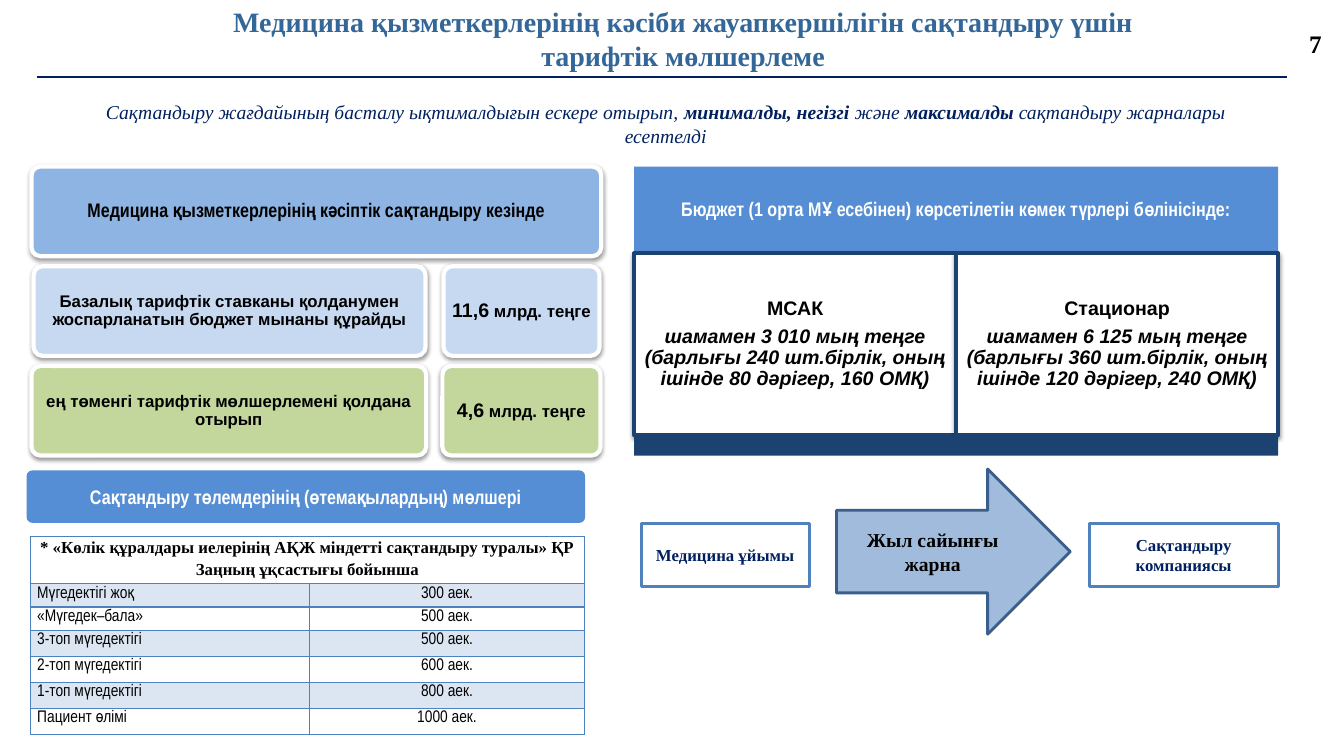
from lxml.etree import SubElement
from pptx import Presentation
from pptx.dml.color import RGBColor
from pptx.enum.shapes import MSO_CONNECTOR, MSO_SHAPE
from pptx.enum.text import MSO_ANCHOR, PP_ALIGN
from pptx.oxml.ns import qn
from pptx.util import Pt

BLACK = RGBColor(0x00, 0x00, 0x00)
WHITE = RGBColor(0xFF, 0xFF, 0xFF)
TITLE_BLUE = RGBColor(0x33, 0x66, 0x99)
NAVY = RGBColor(0x00, 0x20, 0x60)
DEEP_BLUE = RGBColor(0x1C, 0x42, 0x71)
MID_BLUE = RGBColor(0x55, 0x8E, 0xD5)
SKY_BLUE = RGBColor(0x8E, 0xB4, 0xE3)
PALE_BLUE = RGBColor(0xC6, 0xD9, 0xF1)
GREEN = RGBColor(0xC3, 0xD6, 0x9B)
ACCENT = RGBColor(0x4F, 0x81, 0xBD)
ARROW_FILL = RGBColor(0xA0, 0xBB, 0xDB)
ARROW_LINE = RGBColor(0x3A, 0x5F, 0x8C)
BAND = RGBColor(0xDC, 0xE6, 0xF2)

ARIAL = "Arial"
NARROW = "Arial Narrow"
TIMES = "Times New Roman"


class SlideBuilder:
    def __init__(self, slide):
        self.slide = slide

    def put_text(self, tf, paragraphs, font, size, color, bold=True, italic=False,
                 align=PP_ALIGN.CENTER, spacing=None, after=None):
        for i, runs in enumerate(paragraphs):
            p = tf.paragraphs[0] if i == 0 else tf.add_paragraph()
            p.alignment = align
            if spacing:
                p.line_spacing = spacing
            if after:
                p.space_after = Pt(after)
            for run in [runs] if isinstance(runs, str) else runs:
                text, changes = (run, {}) if isinstance(run, str) else run
                r = p.add_run()
                r.text = text
                r.font.name = font
                r.font.size = Pt(changes.get("size", size))
                r.font.bold = changes.get("bold", bold)
                r.font.italic = changes.get("italic", italic)
                r.font.color.rgb = color

    def text(self, box, paragraphs, font, size, color, wrap=True, **style):
        tf = self.slide.shapes.add_textbox(*map(Pt, box)).text_frame
        tf.word_wrap = wrap
        tf.vertical_anchor = MSO_ANCHOR.MIDDLE
        self.put_text(tf, paragraphs, font, size, color, **style)

    def shape(self, kind, box, fill, line=None, width=2, radius=None, inset=None, shadow=False):
        sp = self.slide.shapes.add_shape(kind, *map(Pt, box))
        sp.fill.solid()
        sp.fill.fore_color.rgb = fill
        if line is None:
            sp.line.fill.background()
        else:
            sp.line.color.rgb = line
            sp.line.width = Pt(width)
        if radius:
            sp.adjustments[0] = radius
        sp.shadow.inherit = False
        if shadow:
            effects = sp._element.spPr.find(qn("a:effectLst"))
            outer = SubElement(effects, qn("a:outerShdw"), blurRad=str(Pt(3.1)),
                               dist=str(Pt(1.6)), dir="5400000", rotWithShape="0")
            tint = SubElement(outer, qn("a:srgbClr"), val=str(BLACK))
            SubElement(tint, qn("a:alpha"), val="38000")
        tf = sp.text_frame
        tf.word_wrap = True
        tf.vertical_anchor = MSO_ANCHOR.MIDDLE
        if inset:
            tf.margin_left = tf.margin_right = tf.margin_top = tf.margin_bottom = Pt(inset)
        return tf

    def card(self, box, fill, runs, font, size):
        tf = self.shape(MSO_SHAPE.ROUNDED_RECTANGLE, box, fill, WHITE, 3, 0.1, 4, True)
        self.put_text(tf, [runs], font, size, BLACK, spacing=0.9)

    def line(self, x1, y1, x2, y2, color, width):
        cn = self.slide.shapes.add_connector(MSO_CONNECTOR.STRAIGHT, *map(Pt, (x1, y1, x2, y2)))
        cn.line.color.rgb = color
        cn.line.width = Pt(width)
        SubElement(cn._element.spPr, qn("a:effectLst"))

    def cell(self, cell, text, fill, font, bold, align):
        tc_pr = cell._tc.get_or_add_tcPr()
        for side in ("lnL", "lnR", "lnT", "lnB"):
            border = SubElement(tc_pr, qn(f"a:{side}"), w=str(Pt(1)))
            solid = SubElement(border, qn("a:solidFill"))
            SubElement(solid, qn("a:srgbClr"), val=str(ACCENT))
        cell.fill.solid()
        cell.fill.fore_color.rgb = fill
        cell.margin_left = cell.margin_right = Pt(5)
        cell.margin_top = cell.margin_bottom = 0
        if text:
            self.put_text(cell.text_frame, [text], font, 12, BLACK, bold, align=align,
                          spacing=1.15)

    def table(self, left, top, widths, heights, heading, rows):
        frame = self.slide.shapes.add_table(len(heights), len(widths), Pt(left), Pt(top),
                                            Pt(sum(widths)), Pt(sum(heights)))
        table = frame.table
        table.first_row = table.horz_banding = False
        for column, width in zip(table.columns, widths):
            column.width = Pt(width)
        for row, height in zip(table.rows, heights):
            row.height = Pt(height)
        for i, text in enumerate((heading, "")):
            self.cell(table.cell(0, i), text, WHITE, TIMES, True, PP_ALIGN.CENTER)
        table.cell(0, 0).merge(table.cell(0, 1))
        for i, values in enumerate(rows, 1):
            for j, text in enumerate(values):
                self.cell(table.cell(i, j), text, BAND if i % 2 else WHITE, NARROW, False,
                          PP_ALIGN.CENTER if j else PP_ALIGN.JUSTIFY)


def main():
    prs = Presentation()
    prs.slide_width, prs.slide_height = Pt(960), Pt(540)
    s = SlideBuilder(prs.slides.add_slide(prs.slide_layouts[6]))

    s.text((85, 1.5, 806, 52),
           ["Медицина қызметкерлерінің кәсіби жауапкершілігін сақтандыру үшін",
            "тарифтік мөлшерлеме"], TIMES, 20, TITLE_BLUE)
    s.line(26.5, 54.7, 919.5, 54.7, NAVY, 1.5)
    strong = {"bold": True}
    s.text((54, 65, 843, 47),
           [["Сақтандыру жағдайының басталу ықтималдығын ескере отырып, ",
             ("минималды, негізгі ", strong), "және ", ("максималды ", strong),
             "сақтандыру жарналары есептелді"]], TIMES, 14, NAVY, bold=False, italic=True)

    s.card((22.5, 119, 407, 64), SKY_BLUE,
           "Медицина қызметкерлерінің кәсіптік сақтандыру кезінде", NARROW, 14)
    tariffs = [
        (24, 280, 316.8, 111.5, PALE_BLUE, "11,6",
         "Базалық тарифтік ставканы қолданумен жоспарланатын бюджет мынаны құрайды"),
        (22.5, 282, 316, 113, GREEN, "4,6", "ең төменгі тарифтік мөлшерлемені қолдана отырып"),
    ]
    for i, (left, width, sum_left, sum_width, fill, amount, label) in enumerate(tariffs, 1):
        top = 119 + 71.2 * i
        s.card((left, top, width, 64), fill, label, ARIAL, 12)
        s.card((sum_left, top, sum_width, 64), fill,
               [(amount, {"size": 14}), " млрд. теңге"], ARIAL, 12)

    tf = s.shape(MSO_SHAPE.RECTANGLE, (453, 119, 460, 62), MID_BLUE, inset=4)
    s.put_text(tf, ["Бюджет (1 орта МҰ есебінен) көрсетілетін көмек түрлері бөлінісінде:"],
               NARROW, 14, WHITE, spacing=0.9)
    budgets = [
        ("МСАК", "шамамен 3 010 мың теңге (барлығы 240 шт.бірлік, оның ішінде 80 дәрігер, 160 ОМҚ)"),
        ("Стационар",
         "шамамен 6 125 мың теңге (барлығы 360 шт.бірлік, оның ішінде 120 дәрігер, 240 ОМҚ)"),
    ]
    for i, (care, budget) in enumerate(budgets):
        tf = s.shape(MSO_SHAPE.RECTANGLE, (453 + 230 * i, 181, 230, 130), WHITE, DEEP_BLUE, 3,
                     inset=4, shadow=True)
        s.put_text(tf, [care, [(budget, {"italic": True})]], ARIAL, 14, BLACK, spacing=0.9,
                   after=5)
    s.shape(MSO_SHAPE.RECTANGLE, (453, 311, 460, 14.5), DEEP_BLUE)

    tf = s.shape(MSO_SHAPE.ROUNDED_RECTANGLE, (19, 336, 399, 37.5), MID_BLUE, radius=0.11)
    s.put_text(tf, ["Сақтандыру төлемдерінің (өтемақылардың) мөлшері"], NARROW, 14, WHITE)
    s.table(21.6, 383, [199.5, 196.5], [34, 15, 15] + [18.6] * 4,
            "* «Көлік құралдары иелерінің АҚЖ міндетті сақтандыру туралы» ҚР Заңның ұқсастығы бойынша",
            [("Мүгедектігі жоқ", "300 аек."), ("«Мүгедек–бала»", "500 аек."),
             ("3-топ мүгедектігі", "500 аек."), ("2-топ мүгедектігі", "600 аек."),
             ("1-топ мүгедектігі", "800 аек."), ("Пациент өлімі", "1000 аек.")])

    for left, width, party in ((458, 120, "Медицина ұйымы"), (778, 135, "Сақтандыру компаниясы")):
        tf = s.shape(MSO_SHAPE.RECTANGLE, (left, 374, width, 45), WHITE, ACCENT)
        s.put_text(tf, [party], TIMES, 12, NAVY)
    tf = s.shape(MSO_SHAPE.RIGHT_ARROW, (597.5, 335, 167, 118), ARROW_FILL, ARROW_LINE)
    s.put_text(tf, ["Жыл сайынғы жарна"], TIMES, 14, BLACK)

    s.text((928, 16.5, 24, 29), ["7"], TIMES, 18, BLACK, wrap=False, align=PP_ALIGN.LEFT)
    prs.save("out.pptx")


if __name__ == "__main__":
    main()
